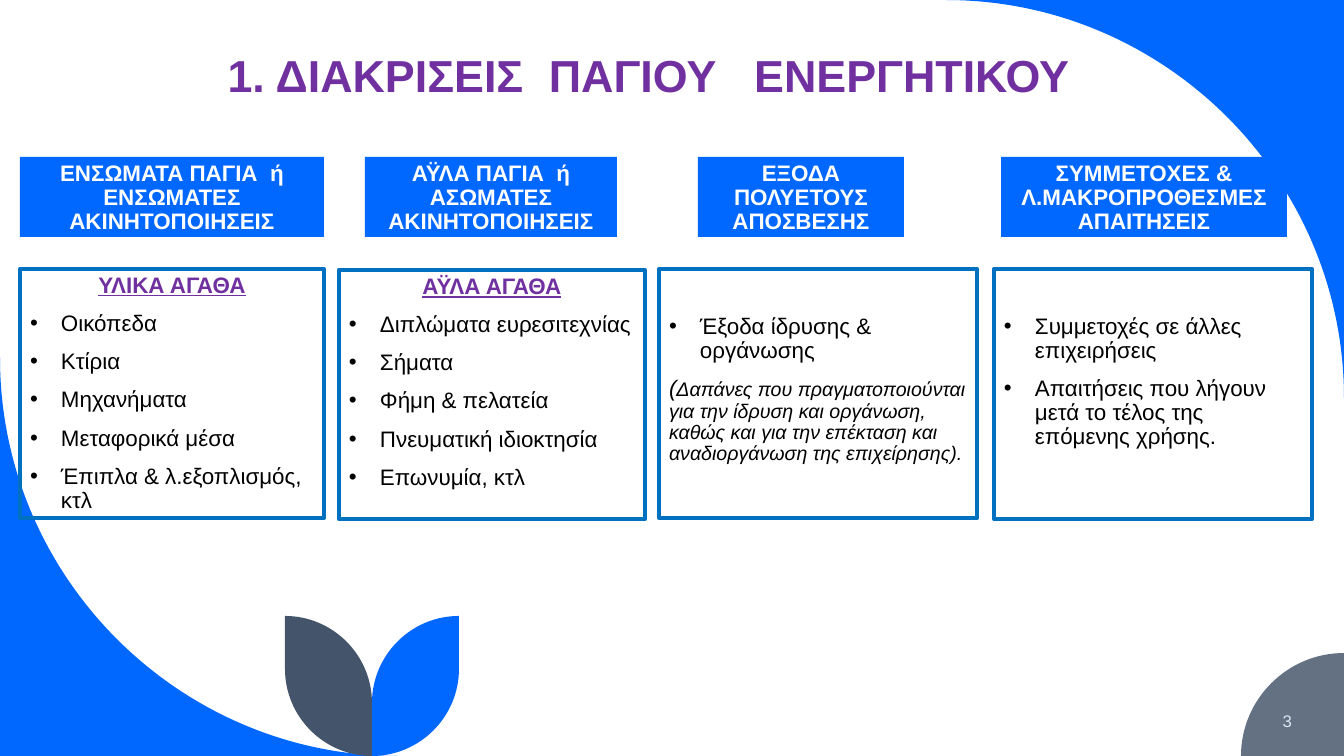
import math

from lxml import etree
from pptx import Presentation, util as u
from pptx.dml.color import RGBColor
from pptx.enum import shapes, text
from pptx.oxml import ns

COLOURS = {
    "blue": "0068FF", "slate": "44546A", "grey": "637183", "frame": "0070C0",
    "purple": "7030A0", "black": "000000", "white": "FFFFFF", "pale": "DAE5EF",
}
LEFT, CENTRE, RIGHT = text.PP_ALIGN.LEFT, text.PP_ALIGN.CENTER, text.PP_ALIGN.RIGHT
TOP, MIDDLE = text.MSO_ANCHOR.TOP, text.MSO_ANCHOR.MIDDLE


def px(length):
    return u.Emu(round(length * 12192000 / 1344))


def colour(name):
    return RGBColor.from_string(COLOURS[name])


def quarter(centre_x, centre_y, radius, start):
    cos, sin = round(math.cos(math.radians(start))), round(math.sin(math.radians(start)))
    return [(centre_x + radius * (along * cos - across * sin),
             centre_y + radius * (along * sin + across * cos))
            for along, across in ((1, 0), (1, 0.55), (0.55, 1), (0, 1))]


class SlideBuilder:
    """Holds the style and the current slide, and adds each kind of element."""

    font = "Arial"
    indent = 31
    space_width = 0.28

    def __init__(self, page):
        self.page = page

    def paint(self, shape, fill):
        shape.shadow.inherit = False
        shape.fill.solid()
        shape.fill.fore_color.rgb = colour(fill)
        shape.line.fill.background()

    def petal(self, steps, fill):
        corners = [(px(x), px(y)) for step in steps for x, y in step]
        builder = self.page.shapes.build_freeform(*corners[0])
        builder.add_line_segments(corners[1:], close=True)
        shape = builder.convert_to_shape()
        lines = shape.element.findall(".//" + ns.qn("a:lnTo"))
        position = -1
        for step in steps:
            if len(step) == 4:
                first, *others = lines[position + 1:position + 4]
                first.tag = ns.qn("a:cubicBezTo")
                for line in others:
                    first.append(line[0])
                    line.getparent().remove(line)
            position += len(step)
        self.paint(shape, fill)

    def place(self, shape, area):
        shape.left, shape.top, shape.width, shape.height = map(px, area)
        shape.element.getparent().append(shape.element)

    def prepare(self, shape, anchor=TOP, top_inset=5):
        frame = shape.text_frame
        frame.word_wrap = True
        frame.auto_size = text.MSO_AUTO_SIZE.NONE
        frame.vertical_anchor = anchor
        frame.margin_left = frame.margin_right = px(10)
        frame.margin_top, frame.margin_bottom = px(top_inset), px(5)
        return frame

    def spaced(self, pieces, size, ink):
        return [(" " if isinstance(piece, int) else piece, size, ink, "b",
                 piece - 1 if isinstance(piece, int) else 0) for piece in pieces]

    def paragraph(self, frame, spans, align=LEFT, bullet=False, spacing=0.9):
        first = not frame.paragraphs[0].runs
        para = frame.paragraphs[0] if first else frame.add_paragraph()
        properties = para._p.get_or_add_pPr()
        indent = px(self.indent) if bullet else 0
        properties.set("marL", str(indent))
        properties.set("indent", str(-indent))
        mark = etree.SubElement(properties, ns.qn("a:buChar" if bullet else "a:buNone"))
        if bullet:
            mark.set("char", "•")
        para.alignment = align
        para.line_spacing = spacing
        para.space_before = u.Pt(0 if first else 10)
        para.space_after = u.Pt(0)
        for words, size, ink, style, extra in spans:
            span = para.add_run()
            span.text = words
            span.font.name = self.font
            span.font.size = u.Pt(size)
            span.font.color.rgb = colour(ink)
            span.font.bold = "b" in style
            span.font.italic = "i" in style
            span.font.underline = "u" in style
            if extra:
                tracking = round(extra * size * self.space_width * 100)
                span._r.get_or_add_rPr().set("spc", str(tracking))

    def title(self, pieces, area):
        box = self.page.shapes.title
        self.place(box, area)
        self.paragraph(self.prepare(box), self.spaced(pieces, 32, "purple"), CENTRE, spacing=1.0)

    def heading(self, pieces, area):
        box = self.page.shapes.add_shape(shapes.MSO_SHAPE.RECTANGLE, *map(px, area))
        self.paint(box, "blue")
        self.paragraph(self.prepare(box), self.spaced(pieces, 16, "white"), CENTRE)

    def list_box(self, index, area, subtitle, items, remark):
        box = self.page.placeholders[index]
        self.place(box, area)
        box.fill.background()
        box.line.color.rgb = colour("frame")
        box.line.width = u.Pt(3)
        frame = self.prepare(box, top_inset=5 if subtitle else 46)
        if subtitle:
            self.paragraph(frame, [(subtitle, 16, "purple", "bu", 0)], CENTRE)
        for item in items:
            self.paragraph(frame, [(item, 16, "black", "", 0)], bullet=True)
        if remark:
            self.paragraph(frame, [("(", 16, "black", "i", 0), (remark, 14, "black", "i", 0)])

    def page_number(self, number, area):
        box = self.page.shapes.add_textbox(*map(px, area))
        self.paragraph(self.prepare(box, MIDDLE), [(number, 12, "pale", "", 0)], RIGHT, spacing=1.0)


PETALS = [
    ([quarter(946, 398, 398, 270), [(1344, 0)]], "blue"),
    ([quarter(398, 358, 398, 90), [(0, 756)]], "blue"),
    ([quarter(1344, 756, 103, 180), [(1344, 756)]], "grey"),
    ([quarter(372, 669, 87, 0), quarter(459, 703, 87, 180)], "blue"),
    ([quarter(372, 669, 87, 90), quarter(285, 703, 87, 270)], "slate"),
]

TITLE = ["1. ΔΙΑΚΡΙΣΕΙΣ", 2, "ΠΑΓΙΟΥ", 3, "ΕΝΕΡΓΗΤΙΚΟΥ"]

COLUMNS = [
    (["ΕΝΣΩΜΑΤΑ ΠΑΓΙΑ", 2, "ή ΕΝΣΩΜΑΤΕΣ ΑΚΙΝΗΤΟΠΟΙΗΣΕΙΣ"], (20, 304), (20, 269, 304, 249),
     "ΥΛΙΚΑ ΑΓΑΘΑ",
     ["Οικόπεδα", "Κτίρια", "Μηχανήματα", "Μεταφορικά μέσα", "Έπιπλα & λ.εξοπλισμός, κτλ"],
     ""),
    (["ΑΫΛΑ ΠΑΓΙΑ", 2, "ή ΑΣΩΜΑΤΕΣ ΑΚΙΝΗΤΟΠΟΙΗΣΕΙΣ"], (365, 252), (339, 270, 306, 249),
     "ΑΫΛΑ ΑΓΑΘΑ",
     ["Διπλώματα ευρεσιτεχνίας", "Σήματα", "Φήμη & πελατεία", "Πνευματική ιδιοκτησία",
      "Επωνυμία, κτλ"],
     ""),
    (["ΕΞΟΔΑ ΠΟΛΥΕΤΟΥΣ ΑΠΟΣΒΕΣΗΣ"], (698, 206), (659, 269, 318, 249),
     "",
     ["Έξοδα ίδρυσης & οργάνωσης"],
     "Δαπάνες που πραγματοποιούνται για την ίδρυση και οργάνωση, καθώς και για την "
     "επέκταση και αναδιοργάνωση της επιχείρησης)."),
    (["ΣΥΜΜΕΤΟΧΕΣ & Λ.ΜΑΚΡΟΠΡΟΘΕΣΜΕΣ ΑΠΑΙΤΗΣΕΙΣ"], (1001, 286), (994, 269, 318, 250),
     "",
     ["Συμμετοχές σε άλλες επιχειρήσεις",
      "Απαιτήσεις που λήγουν μετά το τέλος της επόμενης χρήσης."],
     ""),
]


def main():
    deck = Presentation()
    deck.slide_width, deck.slide_height = px(1344), px(756)
    comparison = deck.slide_layouts.get_by_name("Comparison")
    builder = SlideBuilder(deck.slides.add_slide(comparison))
    for steps, fill in PETALS:
        builder.petal(steps, fill)
    builder.title(TITLE, (53, 43, 1191, 65))
    for index, column in enumerate(COLUMNS, start=1):
        heading, (left, width), area, subtitle, items, remark = column
        builder.heading(heading, (left, 157, width, 80))
        builder.list_box(index, area, subtitle, items, remark)
    builder.page_number("3", (1119, 701, 183, 40))
    deck.save("out.pptx")


if __name__ == "__main__":
    main()
